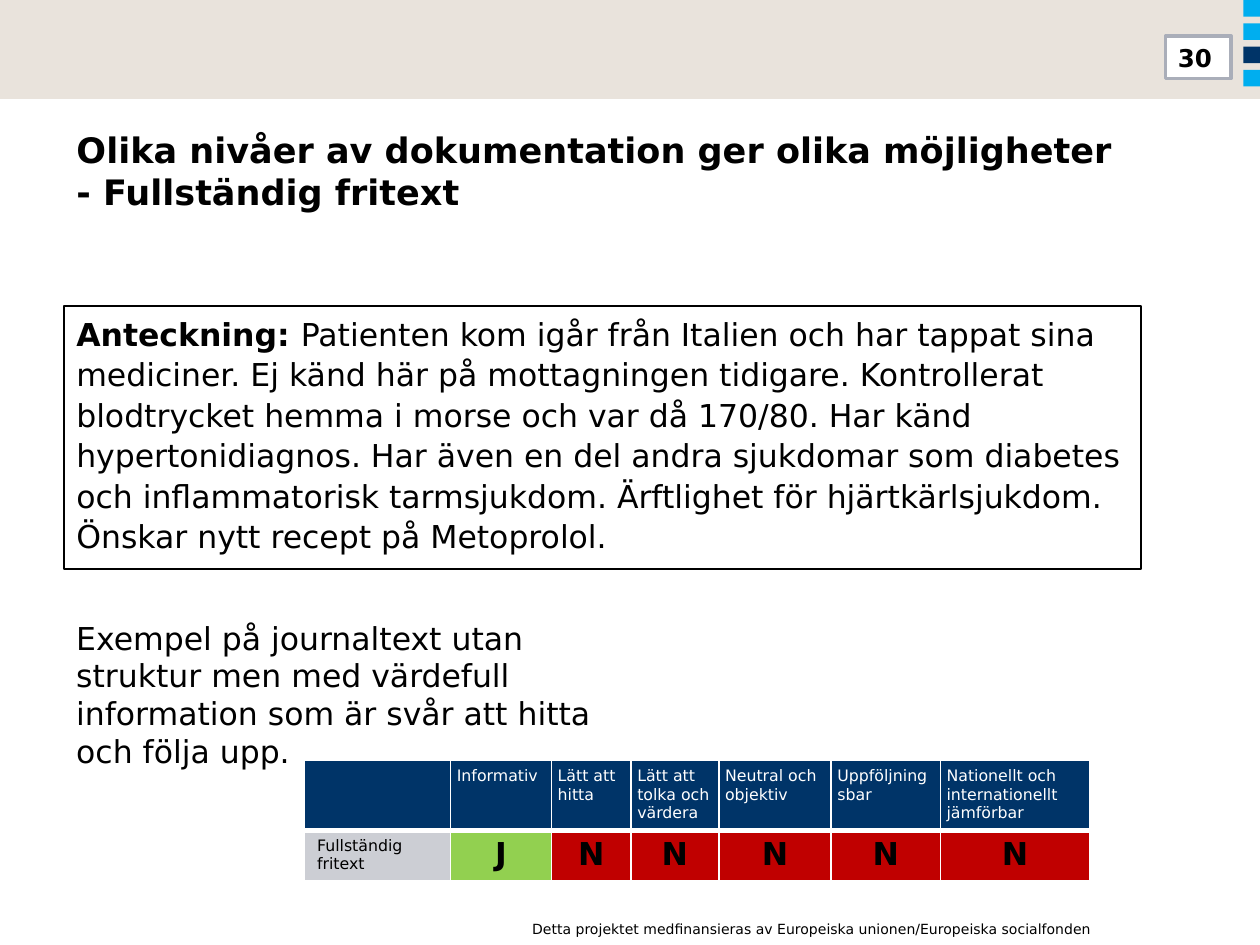
import dataclasses

import pptx
import pptx.dml.color
import pptx.enum.shapes
import pptx.enum.text
import pptx.oxml
import pptx.oxml.ns
import pptx.util

Pt = pptx.util.Pt
ALIGN = pptx.enum.text.PP_ALIGN
ANCHOR = pptx.enum.text.MSO_ANCHOR


@dataclasses.dataclass(frozen=True)
class Theme:
    font: str = "DejaVu Sans"
    black: str = "000000"
    white: str = "FFFFFF"
    sand: str = "E9E3DC"
    cyan: str = "00AEEF"
    navy: str = "003468"
    frame: str = "AAAEB9"
    label: str = "CCCED4"
    yes: str = "92D050"
    no: str = "C00000"
    title: int = 20
    body: int = 18
    number: int = 14
    small: int = 9
    footer: int = 8


def rgb(value):
    return pptx.dml.color.RGBColor.from_string(value)


class SlideBuilder:
    def __init__(self, slide, theme):
        self.slide = slide
        self.theme = theme

    def style(self, p, size, color=None, bold=None, align=ALIGN.LEFT):
        p.alignment = align
        p.font.name = self.theme.font
        p.font.size = Pt(size)
        p.font.bold = bold
        p.font.color.rgb = rgb(color or self.theme.black)

    def rect(self, x, y, w, h, fill=None, line=None, line_width=1):
        sp = self.slide.shapes.add_shape(
            pptx.enum.shapes.MSO_SHAPE.RECTANGLE, Pt(x), Pt(y), Pt(w), Pt(h))
        sp.shadow.inherit = False
        if fill:
            sp.fill.solid()
            sp.fill.fore_color.rgb = rgb(fill)
        else:
            sp.fill.background()
        if line:
            sp.line.color.rgb = rgb(line)
            sp.line.width = Pt(line_width)
        else:
            sp.line.fill.background()
        return sp

    def add_runs(self, sp, runs, size, bold=None, align=ALIGN.LEFT, anchor=ANCHOR.TOP):
        """Fill a shape with one paragraph of (text, bold) runs."""
        tf = sp.text_frame
        tf.word_wrap = True
        tf.vertical_anchor = anchor
        p = tf.paragraphs[0]
        self.style(p, size, bold=bold, align=align)
        for text, run_bold in runs:
            r = p.add_run()
            r.text = text
            r.font.bold = run_bold
        return p

    def text(self, x, y, w, h, text, size, align=ALIGN.LEFT):
        sp = self.slide.shapes.add_textbox(Pt(x), Pt(y), Pt(w), Pt(h))
        self.add_runs(sp, [(text, None)], size, align=align)

    def title(self, x, y, w, h, text):
        sp = self.slide.shapes.title
        sp.left, sp.top, sp.width, sp.height = Pt(x), Pt(y), Pt(w), Pt(h)
        tf = sp.text_frame
        tf.auto_size = pptx.enum.text.MSO_AUTO_SIZE.NONE
        tf.vertical_anchor = ANCHOR.TOP
        tf.text = text
        self.style(tf.paragraphs[0], self.theme.title, bold=True)

    def borders(self, cell, **widths):
        """Draw white borders, in the order L, R, T, B."""
        tc_pr = cell._tc.get_or_add_tcPr()
        for side, width in widths.items():
            tc_pr.append(pptx.oxml.parse_xml(
                f'<a:ln{side} {pptx.oxml.ns.nsdecls("a")} w="{Pt(width)}"><a:solidFill>'
                f'<a:srgbClr val="{self.theme.white}"/></a:solidFill></a:ln{side}>'))

    def cell(self, cell, text, fill, size, color, inset=None, **style):
        cell.fill.solid()
        cell.fill.fore_color.rgb = rgb(fill)
        if inset is not None:
            cell.margin_left = cell.margin_right = Pt(inset)
            cell.margin_top = cell.margin_bottom = Pt(inset)
        cell.text = text
        self.style(cell.text_frame.paragraphs[0], size, color, **style)

    def rating_table(self, x, y, widths, heights, headings, label, ratings):
        th = self.theme
        table = self.slide.shapes.add_table(
            2, len(widths), Pt(x), Pt(y), Pt(sum(widths)), Pt(sum(heights))).table
        for column, width in zip(table.columns, widths):
            column.width = Pt(width)
        for row, height in zip(table.rows, heights):
            row.height = Pt(height)
        for i in range(len(widths)):
            self.borders(table.cell(0, i), L=1, R=1, T=1, B=3)
            self.borders(table.cell(1, i), L=1, R=1, T=3, B=1)
        for i, heading in enumerate(headings):
            self.cell(table.cell(0, i), heading, th.navy, th.small, th.white, 3.6)
        self.cell(table.cell(1, 0), label, th.label, th.small, th.black)
        for i, rating in enumerate(ratings, 1):
            fill = th.yes if rating == "J" else th.no
            self.cell(table.cell(1, i), rating, fill, th.body, th.black,
                      bold=True, align=ALIGN.CENTER)


def main():
    prs = pptx.Presentation()
    prs.slide_width, prs.slide_height = Pt(720), Pt(540)
    th = Theme()
    s = SlideBuilder(prs.slides.add_slide(prs.slide_layouts[5]), th)

    s.rect(0, 0, 720, 56.5, th.sand)
    for i, color in enumerate([th.cyan, th.cyan, th.navy, th.cyan]):
        s.rect(710.5, i * 13.3, 9.5, 9.5, color)
    s.text(289, 522.5, 342, 17, "Detta projektet medfinansieras av Europeiska "
           "unionen/Europeiska socialfonden", th.footer, ALIGN.RIGHT)

    s.title(36.5, 70, 648, 90, "Olika nivåer av dokumentation ger olika möjligheter\v"
            "- Fullständig fritext")

    note = s.rect(36.5, 175, 615.5, 150, line=th.black)
    p = s.add_runs(note, [
        ("Anteckning: ", True),
        ("Patienten kom igår från Italien och har tappat sina mediciner. Ej känd här på "
         "mottagningen tidigare. Kontrollerat blodtrycket hemma i morse och var då 170/80. "
         "Har känd hypertonidiagnos. Har även en del andra sjukdomar som diabetes och "
         "inflammatorisk tarmsjukdom. Ärftlighet för hjärtkärlsjukdom. Önskar nytt recept "
         "på Metoprolol.", False)], th.body)
    p.line_spacing = 1.07

    s.text(36.5, 350, 318, 94, "Exempel på journaltext utan struktur men med värdefull "
           "information som är svår att hitta och följa upp.", th.body)

    s.rating_table(
        174, 434.7, [83.5, 57.6, 45.5, 50.2, 64.2, 62.4, 85.5], [39.6, 29],
        ["", "Informativ", "Lätt att hitta", "Lätt att tolka och värdera",
         "Neutral och objektiv", "Uppföljningsbar",
         "Nationellt och internationellt jämförbar"],
        "Fullständig fritext", "JNNNNN")

    number = s.rect(666, 20.5, 37.5, 24.5, th.white, th.frame, 2)
    s.add_runs(number, [("30", None)], th.number, bold=True, anchor=ANCHOR.MIDDLE)

    prs.save("out.pptx")


if __name__ == "__main__":
    main()
